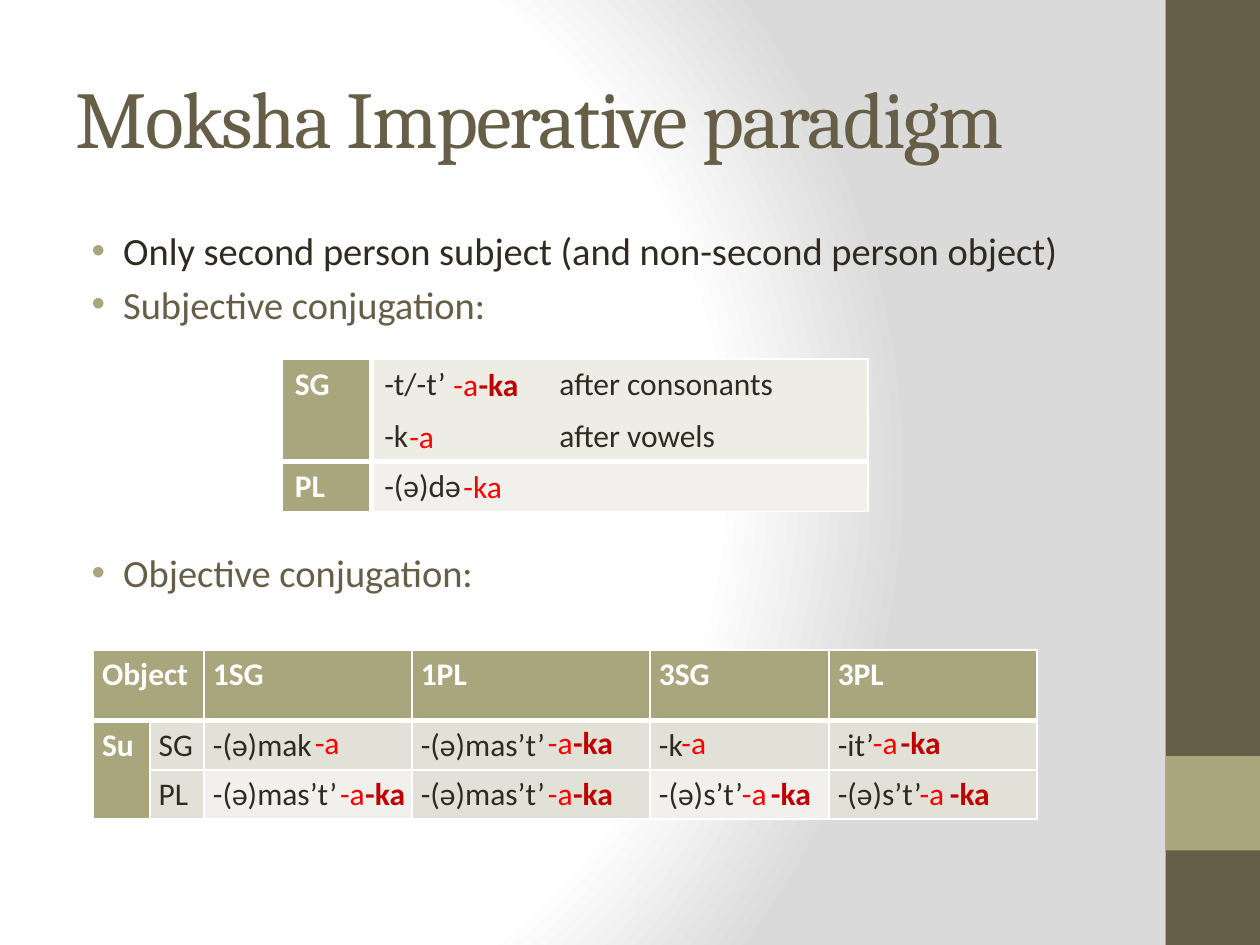
from pptx import Presentation
from pptx.dml.color import RGBColor
from pptx.enum.shapes import MSO_SHAPE
from pptx.enum.text import MSO_ANCHOR, PP_ALIGN
from pptx.oxml import parse_xml
from pptx.oxml.ns import nsdecls
from pptx.util import Pt

RECT = MSO_SHAPE.RECTANGLE
LEFT, MIDDLE = PP_ALIGN.LEFT, MSO_ANCHOR.MIDDLE
EMU_PER_PX = 9144

BROWN, OLIVE, INK, WHITE = "675E47", "A9A57C", "2F2B20", "FFFFFF"
RED, DARK_RED = "FF0000", "C00000"
BAND, LIGHT, CREAM = "E2E1D7", "F1F0EC", "EEEDE5"

TITLE = "Moksha Imperative paradigm"
BULLETS = [
    ("Only second person subject (and non-second person object)", INK, 4.4),
    ("Subjective conjugation:", BROWN, 4.4),
    ("Objective conjugation:", BROWN, 127),
]
SIDE_BARS = [(925, 0, 75, 750, BROWN), (925, 600, 75, 75, OLIVE)]

OBJECTIVE = {
    "pos": (74, 516), "cols": [45, 43, 165, 189, 142, 165], "rows": [56, 39, 39],
    "texts": [
        ["Object", "", "1SG", "1PL", "3SG", "3PL"],
        ["Su", "SG", "-(ə)mak", "-(ə)mas’t’", "-k", "-it’"],
        ["", "PL", "-(ə)mas’t’", "-(ə)mas’t’", "-(ə)s’t’", "-(ə)s’t’"],
    ],
    "fills": [
        [OLIVE] * 6,
        [OLIVE] + [BAND] * 5,
        [OLIVE, BAND, LIGHT, BAND, LIGHT, BAND],
    ],
    "borders": [[(1, 1, 1, 3)] * 6, [(1, 1, 3, 1)] * 6, [(1, 1, 1, 1)] * 6],
    "merges": [((0, 0), (0, 1)), ((1, 0), (2, 0))],
    "insets": (7, 0), "spacing": 1.15,
}
SUBJECTIVE = {
    "pos": (224, 285), "cols": [71, 394], "rows": [41, 40, 40],
    "texts": [
        ["SG", "-t/-t’\tafter consonants"],
        ["", "-k\tafter vowels"],
        ["PL", "-(ə)də"],
    ],
    "fills": [[OLIVE, CREAM], [OLIVE, CREAM], [OLIVE, LIGHT]],
    "borders": [
        [(1, 3, 1, 3), (3, 1, 1, 0)],
        [(1, 3, 0, 3), (3, 1, 0, 3)],
        [(1, 3, 3, 1), (3, 1, 3, 1)],
    ],
    "merges": [((0, 0), (1, 0))],
    "insets": (10, 5), "spacing": 1.0, "tab": 139,
}

PLAIN, STRONG = (RED, False), (DARK_RED, True)
SUFFIXES = [
    ("-a", PLAIN, {285: [350], 326: [315], 569: [240, 425, 531, 683],
                   609: [260, 425, 579, 720]}),
    ("-ka", PLAIN, {366: [358]}),
    ("-ka", STRONG, {285: [370], 569: [445, 705], 609: [280, 445, 602, 744]}),
]


def px(n):
    return n * EMU_PER_PX


def rgb(value):
    return RGBColor.from_string(value)


def add_run(p, text, size, color, bold=False, font="Calibri"):
    r = p.add_run()
    r.text = text
    r.font.name, r.font.size, r.font.bold = font, Pt(size), bold
    r.font.color.rgb = rgb(color)
    return r


def set_background(s):
    stops = "".join(
        f'<a:gs pos="{pos * 1000}"><a:srgbClr val="{color}"/></a:gs>'
        for pos, color in [(0, WHITE), (75, WHITE), (100, "DADADA")])
    s._element.cSld.insert(0, parse_xml(
        f'<p:bg {nsdecls("p", "a")}><p:bgPr><a:gradFill rotWithShape="1">'
        f'<a:gsLst>{stops}</a:gsLst><a:path path="circle">'
        '<a:fillToRect l="20000" t="50000" r="100000" b="50000"/></a:path>'
        '</a:gradFill><a:effectLst/></p:bgPr></p:bg>'))


def add_bar(s, x, y, w, h, color):
    bar = s.shapes.add_shape(RECT, px(x), px(y), px(w), px(h))
    bar.shadow.inherit = False
    bar.fill.solid()
    bar.fill.fore_color.rgb = rgb(color)
    bar.line.fill.background()


def set_title(s):
    title = s.shapes.title
    title.left, title.top, title.width, title.height = map(px, (50, 30, 833, 125))
    tf = title.text_frame
    tf.vertical_anchor = MIDDLE
    p = tf.paragraphs[0]
    p.alignment = LEFT
    r = add_run(p, TITLE, 46, BROWN, font="Cambria")
    r._r.get_or_add_rPr().set("spc", "-100")


def add_text_box(s, x, y, w, h):
    tf = s.shapes.add_textbox(px(x), px(y), px(w), px(h)).text_frame
    tf.word_wrap = True
    return tf


def add_bullets(s):
    tf = add_text_box(s, 50, 175, 833, 525)
    for i, (text, color, before) in enumerate(BULLETS):
        p = tf.add_paragraph() if i else tf.paragraphs[0]
        p.space_before = Pt(before)
        pPr = p._p.get_or_add_pPr()
        pPr.set("marL", str(px(38)))
        pPr.set("indent", str(px(-25)))
        for xml in (f'<a:buClr {nsdecls("a")}><a:srgbClr val="{OLIVE}"/></a:buClr>',
                    f'<a:buFont {nsdecls("a")} typeface="Arial"/>',
                    f'<a:buChar {nsdecls("a")} char="•"/>'):
            pPr.append(parse_xml(xml))
        add_run(p, text, 22, color)


def set_borders(cell, widths):
    tcPr = cell._tc.get_or_add_tcPr()
    for i, (side, width) in enumerate(zip("LRTB", widths)):
        paint = (f'<a:solidFill><a:srgbClr val="{WHITE}"/></a:solidFill>'
                 if width else "<a:noFill/>")
        tcPr.insert(i, parse_xml(
            f'<a:ln{side} {nsdecls("a")} w="{Pt(width)}">{paint}</a:ln{side}>'))


def add_paradigm(s, spec):
    cols, rows = spec["cols"], spec["rows"]
    x, y = spec["pos"]
    table = s.shapes.add_table(len(rows), len(cols), px(x), px(y),
                               px(sum(cols)), px(sum(rows))).table
    for column, width in zip(table.columns, cols):
        column.width = px(width)
    for row, height in zip(table.rows, rows):
        row.height = px(height)
    for start, end in spec["merges"]:
        table.cell(*start).merge(table.cell(*end))
    side, top = map(px, spec["insets"])
    for i, texts in enumerate(spec["texts"]):
        for j, text in enumerate(texts):
            cell, fill = table.cell(i, j), spec["fills"][i][j]
            cell.margin_left = cell.margin_right = side
            cell.margin_top = cell.margin_bottom = top
            cell.fill.solid()
            cell.fill.fore_color.rgb = rgb(fill)
            set_borders(cell, spec["borders"][i][j])
            if not text:
                continue
            p = cell.text_frame.paragraphs[0]
            p.line_spacing = spec["spacing"]
            if "\t" in text:
                p._p.get_or_add_pPr().append(parse_xml(
                    f'<a:tabLst {nsdecls("a")}><a:tab pos="{px(spec["tab"])}" '
                    'algn="l"/></a:tabLst>'))
            header = fill == OLIVE
            add_run(p, text, 18, WHITE if header else INK, header)


def add_suffixes(s):
    for text, (color, bold), places in SUFFIXES:
        for y, lefts in places.items():
            for x in lefts:
                tf = add_text_box(s, x, y, 55, 40)
                add_run(tf.paragraphs[0], text, 18, color, bold)


def main():
    prs = Presentation()
    prs.slide_width, prs.slide_height = px(1000), px(750)
    s = prs.slides.add_slide(prs.slide_layouts[5])
    set_background(s)
    for bar in SIDE_BARS:
        add_bar(s, *bar)
    set_title(s)
    add_bullets(s)
    add_paradigm(s, OBJECTIVE)
    add_paradigm(s, SUBJECTIVE)
    add_suffixes(s)
    prs.save("out.pptx")


if __name__ == "__main__":
    main()
